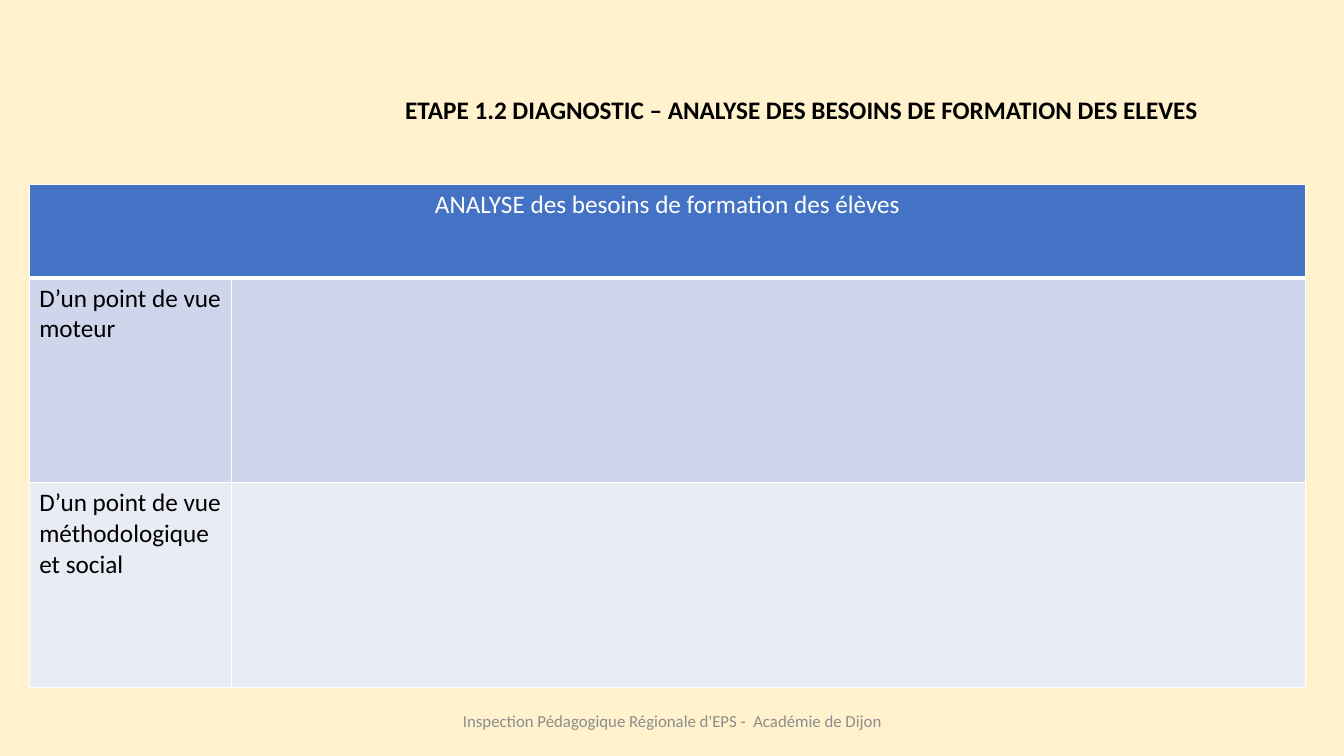
from lxml import etree
from pptx import Presentation
from pptx.dml.color import RGBColor
from pptx.enum.text import MSO_ANCHOR, PP_ALIGN
from pptx.oxml.ns import qn
from pptx.util import Inches, Pt

LEFT, CENTER = PP_ALIGN.LEFT, PP_ALIGN.CENTER
TOP, MIDDLE = MSO_ANCHOR.TOP, MSO_ANCHOR.MIDDLE

FONT = "Calibri"
BLACK, WHITE, GREY = "000000", "FFFFFF", "8C8C8C"
BACKGROUND = "FFF2CC"

TITLE = "ETAPE 1.2 DIAGNOSTIC – ANALYSE DES BESOINS DE FORMATION DES ELEVES"
FOOTER = "Inspection Pédagogique Régionale d'EPS -  Académie de Dijon"

# text, row height, fill, text colour, alignment, bottom border width
ROWS = [
    ("ANALYSE des besoins de formation des élèves", 0.93, "4472C4", WHITE, CENTER, 3),
    ("D’un point de vue moteur", 2.03, "CFD5EA", BLACK, LEFT, 1),
    ("D’un point de vue méthodologique et social", 2.03, "E9EBF5", BLACK, LEFT, 1),
]
COL_WIDTHS = [2.01, 10.65]
TABLE_LEFT, TABLE_TOP = 0.29, 1.83


def rgb(value):
    return RGBColor.from_string(value)


def write(tf, text, size, color, align=LEFT, bold=False):
    p = tf.paragraphs[0]
    p.alignment = align
    r = p.add_run()
    r.text = text
    r.font.name, r.font.size, r.font.bold = FONT, Pt(size), bold
    r.font.color.rgb = rgb(color)


def add_label(s, box, text, size, color, align=LEFT, anchor=TOP, bold=False):
    tf = s.shapes.add_textbox(*map(Inches, box)).text_frame
    tf.word_wrap = True
    tf.vertical_anchor = anchor
    write(tf, text, size, color, align, bold)


def set_borders(cell, color, **widths):
    """Draw cell borders; widths in points are keyed by side: L, R, T, B."""
    tcPr = cell._tc.get_or_add_tcPr()
    for side, width in widths.items():
        ln = etree.SubElement(tcPr, qn(f"a:ln{side}"), w=str(Pt(width)))
        fill = etree.SubElement(ln, qn("a:solidFill"))
        etree.SubElement(fill, qn("a:srgbClr"), val=color)


def add_analysis_table(s):
    size = sum(COL_WIDTHS), sum(row[1] for row in ROWS)
    frame = s.shapes.add_table(len(ROWS), len(COL_WIDTHS),
                               *map(Inches, (TABLE_LEFT, TABLE_TOP, *size)))
    table = frame.table
    for column, width in zip(table.columns, COL_WIDTHS):
        column.width = Inches(width)
    top = 1
    for i, (text, height, fill, color, align, bottom) in enumerate(ROWS):
        table.rows[i].height = Inches(height)
        for cell in table.rows[i].cells:
            set_borders(cell, WHITE, L=1, R=1, T=top, B=bottom)
            cell.fill.solid()
            cell.fill.fore_color.rgb = rgb(fill)
        write(table.cell(i, 0).text_frame, text, 18, color, align)
        top = bottom
    table.cell(0, 0).merge(table.cell(0, len(COL_WIDTHS) - 1))


def main():
    prs = Presentation()
    prs.slide_width, prs.slide_height = Inches(13.33), Inches(7.5)
    s = prs.slides.add_slide(prs.slide_layouts[6])
    s.background.fill.solid()
    s.background.fill.fore_color.rgb = rgb(BACKGROUND)
    add_label(s, (3.92, 0.89, 8.89, 1.31), TITLE, 18, BLACK, bold=True)
    add_label(s, (4.42, 6.95, 4.5, 0.4), FOOTER, 12, GREY, CENTER, MIDDLE)
    add_analysis_table(s)
    prs.save("out.pptx")


if __name__ == "__main__":
    main()
